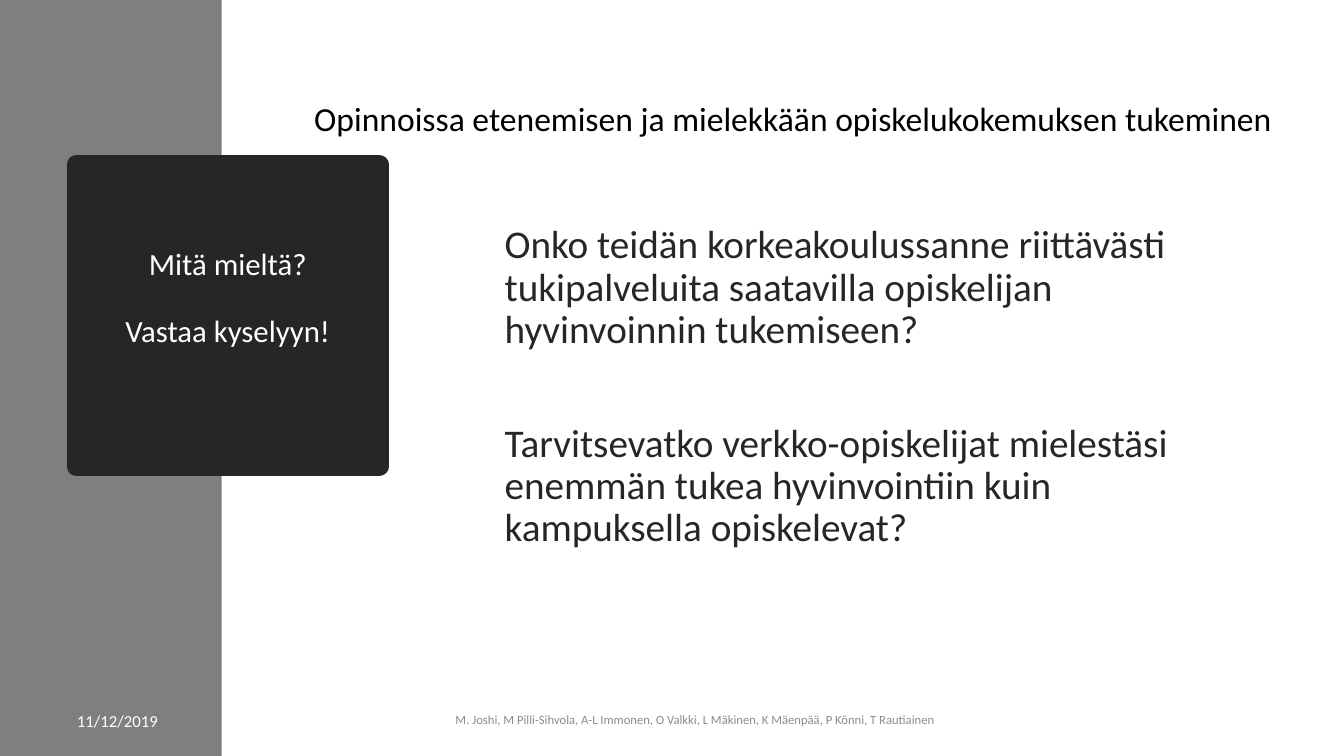
from lxml import etree
from pptx import Presentation
from pptx.dml.color import RGBColor
from pptx.enum import shapes, text
from pptx.oxml import ns
from pptx.util import Cm, Pt

FONT = "Calibri"
WHITE = RGBColor(0xFF, 0xFF, 0xFF)
BLACK = RGBColor(0x00, 0x00, 0x00)
CHARCOAL = RGBColor(0x26, 0x26, 0x26)
BAND_GREY = RGBColor(0x7F, 0x7F, 0x7F)
FOOTER_GREY = RGBColor(0x8C, 0x8C, 0x8C)

LEFT, CENTER = text.PP_ALIGN.LEFT, text.PP_ALIGN.CENTER
TOP, MIDDLE = text.MSO_ANCHOR.TOP, text.MSO_ANCHOR.MIDDLE


def write(shape, paragraphs, size, color, align=LEFT, anchor=TOP, spacing=1.0, gap=0):
    """Fill a shape with paragraphs, separated by gap points."""
    frame = shape.text_frame
    frame.word_wrap = True
    frame.auto_size = text.MSO_AUTO_SIZE.NONE
    frame.vertical_anchor = anchor
    for index, words in enumerate(paragraphs):
        paragraph = frame.add_paragraph() if index else frame.paragraphs[0]
        paragraph.alignment = align
        paragraph.line_spacing = spacing
        paragraph.space_before = Pt(gap if index else 0)
        run = paragraph.add_run()
        run.text = words
        run.font.name = FONT
        run.font.size = Pt(size)
        run.font.color.rgb = color


def add_text(slide, left, top, width, height, paragraphs, size, color, **layout):
    box = slide.shapes.add_textbox(Cm(left), Cm(top), Cm(width), Cm(height))
    write(box, paragraphs, size, color, **layout)


def add_side_band(slide, width, height):
    band = slide.shapes.add_shape(shapes.MSO_SHAPE.RECTANGLE, 0, 0, width, height)
    band.shadow.inherit = False
    band.fill.solid()
    band.fill.fore_color.rgb = BAND_GREY
    band.line.fill.background()
    # Place the band behind the title panel
    slide.shapes._spTree.insert(2, band._element)


def format_title_panel(panel, paragraphs):
    panel.left, panel.top = Cm(1.93), Cm(4.14)
    panel.width = panel.height = Cm(7.62)
    panel.fill.solid()
    panel.fill.fore_color.rgb = CHARCOAL
    panel.line.color.rgb = CHARCOAL
    panel.line.width = Pt(13.75)
    # The thick outline's round joins give the panel its soft corners
    outline = panel._element.spPr.find(ns.qn("a:ln"))
    etree.SubElement(outline, ns.qn("a:round"))
    write(panel, paragraphs, 22, WHITE, align=CENTER, anchor=MIDDLE, spacing=0.9, gap=24)
    panel.text_frame.margin_bottom = Cm(0.97)


def main():
    deck = Presentation()
    deck.slide_width, deck.slide_height = Cm(33.87), Cm(19.05)
    slide = deck.slides.add_slide(deck.slide_layouts[5])

    # Left band and title panel
    add_side_band(slide, Cm(5.59), deck.slide_height)
    format_title_panel(slide.shapes.title, ["Mitä mieltä?", "Vastaa kyselyyn!\u00a0".strip()])

    # Date and authors
    add_text(slide, 0.66, 17.65, 4.6, 1.02, ["11/12/2019"], 12, WHITE,
             align=CENTER, anchor=MIDDLE)
    add_text(slide, 11.23, 17.65, 13.46, 1.02,
             ["M. Joshi, M Pilli-Sihvola, A-L Immonen, O Valkki, L Mäkinen, "
              "K Mäenpää, P Könni, T Rautiainen"],
             9, FOOTER_GREY, anchor=MIDDLE, spacing=0.9)

    # Survey questions
    add_text(slide, 12.47, 5.54, 18.06, 9.04,
             ["Onko teidän korkeakoulussanne riittävästi tukipalveluita "
              "saatavilla opiskelijan hyvinvoinnin tukemiseen?",
              "Tarvitsevatko verkko-opiskelijat mielestäsi enemmän tukea "
              "hyvinvointiin kuin kampuksella opiskelevat?"],
             28, CHARCOAL, spacing=0.9, gap=51)

    # Topic heading
    add_text(slide, 7.67, 2.34, 25.17, 1.27,
             ["Opinnoissa etenemisen ja mielekkään opiskelukokemuksen tukeminen"],
             24, BLACK)

    deck.save("out.pptx")


if __name__ == "__main__":
    main()
